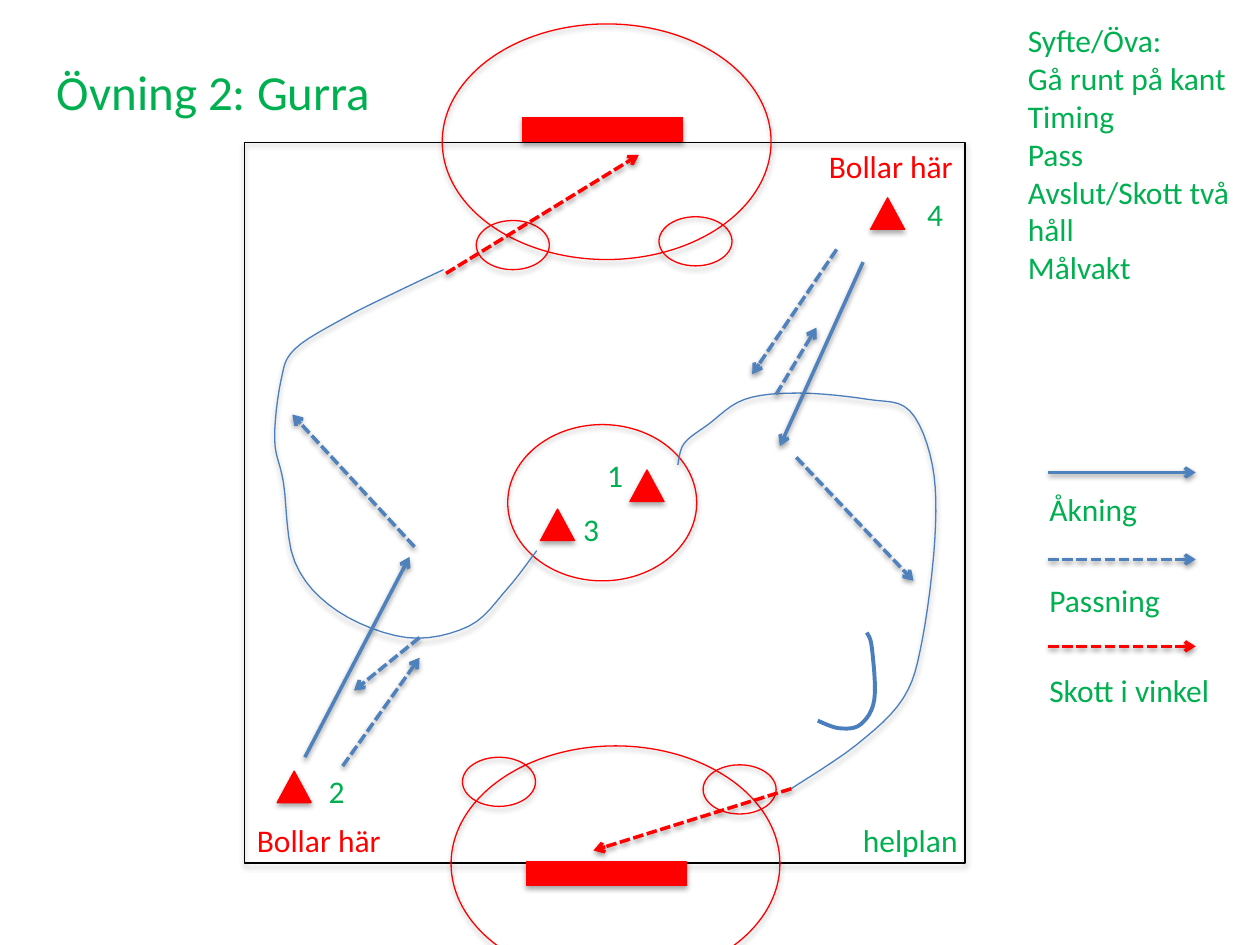
from dataclasses import dataclass

from lxml import etree
from pptx import Presentation
from pptx import util as u
from pptx.dml.color import RGBColor
from pptx.enum import dml, shapes, text
from pptx.oxml.ns import qn

COLUMNS, ROWS = 10, 7.5
CURVE_STEPS = 6


@dataclass(frozen=True)
class Theme:
    """Hold the colours, type sizes, line widths and shadows."""
    font: str = "Calibri"
    green: str = "00B050"
    red: str = "FF0000"
    blue: str = "4F81BD"
    route: str = "4B7EBC"
    black: str = "000000"
    title: int = 28
    body: int = 18
    thin: float = 0.75
    arrow: float = 2
    thick: float = 2.25
    mark_shadow: tuple = (3.1, 1.8, 35)
    arrow_shadow: tuple = (3.1, 1.6, 38)


THEME = Theme()


def grid(*cells):
    """Turn grid columns and rows into slide lengths."""
    return [u.Inches(cell) for cell in cells]


def rgb(colour):
    """Turn a theme colour into an RGB value."""
    return RGBColor.from_string(colour)


def apply(target, formats):
    """Set every format value on the target."""
    for name, value in formats.items():
        setattr(target, name, value)


def cast_shadow(properties, blur, distance, alpha):
    """Give the shape properties a soft shadow straight below."""
    effects = properties.find(qn("a:effectLst"))
    if effects is None:
        effects = etree.SubElement(properties, qn("a:effectLst"))
    shadow = etree.SubElement(
        effects, qn("a:outerShdw"), blurRad=str(u.Pt(blur)), dist=str(u.Pt(distance)),
        dir="5400000", rotWithShape="0")
    colour = etree.SubElement(shadow, qn("a:srgbClr"), val=THEME.black)
    etree.SubElement(colour, qn("a:alpha"), val=str(alpha * 1000))


def finish(mark, colour, width=THEME.thin, filled=False, shadowed=True):
    """Paint the outline, the fill and the shadow of a mark."""
    if filled:
        mark.fill.solid()
        mark.fill.fore_color.rgb = rgb(colour)
    else:
        mark.fill.background()
    mark.line.color.rgb = rgb(colour)
    mark.line.width = u.Pt(width)
    mark.shadow.inherit = False
    if shadowed:
        cast_shadow(mark._element.spPr, *THEME.mark_shadow)


def draw_marks(slide, preset, size, places, colour=THEME.red, filled=False):
    """Draw equal markings, one at each place."""
    for place in places:
        finish(slide.shapes.add_shape(preset, *grid(*place, *size)), colour, filled=filled)


def blend(before, start, end, after, share):
    """Find one coordinate on the Catmull-Rom curve from start to end."""
    slope = end - before
    bend = 2 * before - 5 * start + 4 * end - after
    twist = 3 * (start - end) + after - before
    return start + share * (slope + share * (bend + share * twist)) / 2


def smooth(turns):
    """List the points of a smooth curve through the turning points."""
    padded = [turns[0], *turns, turns[-1]]
    curve = [turns[0]]
    for stretch in zip(padded, padded[1:], padded[2:], padded[3:]):
        for step in range(1, CURVE_STEPS + 1):
            curve.append(tuple(blend(*axis, step / CURVE_STEPS) for axis in zip(*stretch)))
    return curve


def draw_route(slide, turns, width=THEME.thin, shadowed=True):
    """Draw a skating route that bends through its turning points."""
    start, *rest = [grid(*point) for point in smooth(turns)]
    builder = slide.shapes.build_freeform(*start)
    builder.add_line_segments(rest, close=False)
    finish(builder.convert_to_shape(), THEME.route, width, shadowed=shadowed)


def draw_arrow(slide, start, end, colour=THEME.blue, dash=dml.MSO_LINE.SQUARE_DOT):
    """Draw an arrow between two grid points."""
    arrow = slide.shapes.add_connector(shapes.MSO_CONNECTOR.STRAIGHT, *grid(*start, *end))
    arrow.line.color.rgb = rgb(colour)
    apply(arrow.line, {"width": u.Pt(THEME.arrow), "dash_style": dash})
    properties = arrow._element.spPr
    etree.SubElement(properties.find(qn("a:ln")), qn("a:tailEnd"), type="arrow")
    cast_shadow(properties, *THEME.arrow_shadow)


def skate(slide, start, end):
    """Draw a straight skating arrow."""
    draw_arrow(slide, start, end, dash=dml.MSO_LINE.SOLID)


def pass_ball(slide, start, end):
    """Draw a passing arrow."""
    draw_arrow(slide, start, end)


def shoot(slide, start, end):
    """Draw a shooting arrow."""
    draw_arrow(slide, start, end, THEME.red)


def write(slide, place, size, lines, colour=THEME.green, points=THEME.body,
          align=text.PP_ALIGN.LEFT):
    """Write one paragraph for each line of wording."""
    frame = slide.shapes.add_textbox(*grid(*place, *size)).text_frame
    apply(frame, {"text": "\n".join(lines), "word_wrap": True,
                  "auto_size": text.MSO_AUTO_SIZE.SHAPE_TO_FIT_TEXT})
    for paragraph in frame.paragraphs:
        paragraph.alignment = align
        apply(paragraph.font, {"name": THEME.font, "size": u.Pt(points)})
        paragraph.font.color.rgb = rgb(colour)


def draw_rink(slide):
    """Draw the rink with its goals, zones, dots and centre circle."""
    box, oval = shapes.MSO_SHAPE.RECTANGLE, shapes.MSO_SHAPE.OVAL
    goals = [(4.15, 0.93), (4.18, 6.84)]
    zones = [(3.51, 0.19), (3.58, 5.92)]
    dots = [(3.78, 1.75), (5.23, 1.72), (3.67, 6.01), (5.58, 6.07)]
    centre_circle = (4.03, 3.37)
    draw_marks(slide, box, (5.72, 5.72), [(1.94, 1.13)], THEME.black)
    draw_marks(slide, box, (1.27, 0.19), goals, filled=True)
    draw_marks(slide, oval, (2.61, 1.87), zones)
    draw_marks(slide, oval, (0.58, 0.39), dots)
    draw_marks(slide, oval, (1.5, 1.24), [centre_circle])


def draw_players(slide):
    """Place the numbered players and the ball corners."""
    players = {"1": (5, 3.73), "2": (2.2, 6.12), "3": (4.29, 4.04), "4": (6.91, 1.57)}
    numbers = {"1": (4.72, 3.57), "2": (2.51, 6.08), "3": (4.53, 4), "4": (7.26, 1.5)}
    draw_marks(slide, shapes.MSO_SHAPE.ISOSCELES_TRIANGLE, (0.27, 0.25), players.values(),
               filled=True)
    for number, place in numbers.items():
        write(slide, place, (0.41, 0.4), [number])
    for ball_corner in [(6.48, 1.12), (1.94, 6.47)]:
        write(slide, ball_corner, (1.23, 0.4), ["Bollar här"], THEME.red)


def draw_right_side(slide):
    """Draw how players 1 and 4 work towards the lower goal."""
    draw_route(slide, [(5.38, 3.69), (5.43, 3.52), (5.62, 3.37), (5.91, 3.17), (6.34, 3.12),
                       (6.89, 3.17), (7.22, 3.26), (7.4, 3.69), (7.42, 4.28), (7.32, 5.08),
                       (7.17, 5.54), (6.8, 5.91), (6.28, 6.26)])
    draw_route(slide, [(6.49, 5.72), (6.66, 5.78), (6.83, 5.75), (6.94, 5.55), (6.92, 5.14),
                       (6.88, 5.02)], THEME.thick, shadowed=False)
    skate(slide, (6.85, 2.08), (6.19, 3.54))
    pass_ball(slide, (6.64, 1.98), (5.97, 2.97))
    pass_ball(slide, (6.16, 3.13), (6.48, 2.6))
    pass_ball(slide, (6.32, 3.63), (7.25, 4.61))
    shoot(slide, (6.28, 6.26), (4.71, 6.75))


def draw_left_side(slide):
    """Draw how players 3 and 2 work towards the upper goal."""
    draw_route(slide, [(4.26, 4.37), (4.02, 4.68), (3.72, 4.97), (3.23, 5.06), (2.68, 4.85),
                       (2.34, 4.46), (2.25, 3.83), (2.18, 3.49), (2.23, 3.02), (2.34, 2.77),
                       (2.74, 2.52), (3.14, 2.32), (3.52, 2.14)])
    skate(slide, (2.42, 6.01), (3.25, 4.42))
    pass_ball(slide, (2.72, 6.08), (3.33, 5.22))
    pass_ball(slide, (3.33, 5.06), (2.81, 5.48))
    pass_ball(slide, (3.29, 4.34), (2.32, 3.29))
    shoot(slide, (3.54, 2.17), (5.07, 1.23))


def draw_legend(slide):
    """Explain the three kinds of arrow at equal steps."""
    kinds = {"Åkning": skate, "Passning": pass_ball, "Skott i vinkel": shoot}
    for index, (label, draw_kind) in enumerate(kinds.items()):
        row = 3.75 + 0.69 * index
        draw_kind(slide, (8.32, row), (9.49, row))
        write(slide, (8.23, 3.84 + 0.72 * index), (2.23, 0.4), [label])


def write_headings(slide):
    """Write the title, the aims and the rink note."""
    aims = ["Syfte/Öva:", "Gå runt på kant", "Timing", "Pass", "Avslut/Skott två håll", "Målvakt"]
    write(slide, (-2.13, 0.44), (7.65, 0.57), ["Övning 2: Gurra"], points=THEME.title,
          align=text.PP_ALIGN.CENTER)
    write(slide, (8.06, 0.12), (1.94, 2.52), aims)
    write(slide, (6.75, 6.47), (1.34, 0.4), ["helplan"])


def main():
    """Build the drill slide and save it."""
    deck = Presentation()
    apply(deck, dict(zip(("slide_width", "slide_height"), grid(COLUMNS, ROWS))))
    slide = deck.slides.add_slide(deck.slide_layouts[6])
    for draw_part in (draw_rink, draw_players, draw_right_side, draw_left_side, draw_legend,
                      write_headings):
        draw_part(slide)
    deck.save("out.pptx")


if __name__ == "__main__":
    main()
